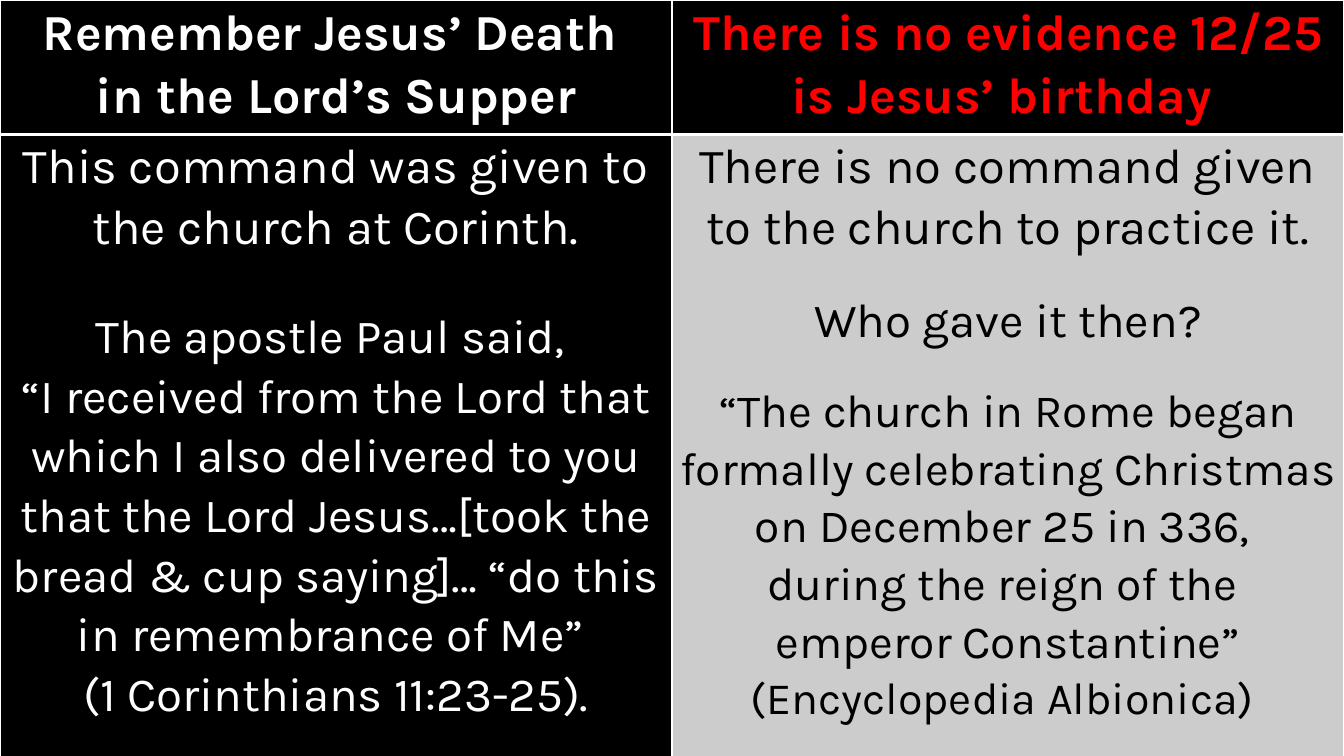
from dataclasses import dataclass

from lxml.etree import SubElement
from pptx import Presentation
from pptx.dml.color import RGBColor as Rgb
from pptx.enum.text import PP_ALIGN as Align
from pptx.oxml.ns import qn
from pptx.table import _Cell as TableCell
from pptx.util import Pt

SCALE = 9525


@dataclass(frozen=True)
class Theme:
    black: str = "000000"
    white: str = "FFFFFF"
    red: str = "FF0000"
    gray: str = "CCCCCC"
    font: str = "Karla"
    head: int = 36
    lead: int = 35
    body: int = 34
    quote: int = 33
    credit: int = 32
    leading: float = 1.07
    thin: int = 1
    thick: int = 3


@dataclass(frozen=True)
class Line:
    text: str
    size: int
    gap: int = 0


@dataclass(frozen=True)
class Panel:
    lines: tuple[Line, ...]
    ink: str
    fill: str


THEME = Theme()
WIDTH, HEIGHT = 1280, 720
COLS = (640, 640)
ROWS = (128, 640)
INSET = 7

HEADS = (
    Panel((
        Line("Remember Jesus’ Death ", THEME.head),
        Line("in the Lord’s Supper", THEME.head),
    ), THEME.white, THEME.black),
    Panel((
        Line("There is no evidence 12/25 is Jesus’ birthday ", THEME.head),
    ), THEME.red, THEME.black),
)
BODIES = (
    Panel((
        Line("This command was given to the church at Corinth.", THEME.lead),
        Line("The apostle Paul said, ", THEME.body, gap=35),
        Line("“I received from the Lord that which I also delivered to you "
             "that the Lord Jesus…[took the bread & cup saying]… "
             "“do this in remembrance of Me” ", THEME.body),
        Line("(1 Corinthians 11:23-25).", THEME.body),
    ), THEME.white, THEME.black),
    Panel((
        Line("There is no command given to the church to practice it.",
             THEME.lead),
        Line("Who gave it then?", THEME.body, gap=23),
        Line("“The church in Rome began formally celebrating Christmas "
             "on December 25 in 336, ", THEME.quote, gap=23),
        Line("during the reign of the ", THEME.quote),
        Line("emperor Constantine”", THEME.quote),
        Line("(Encyclopedia Albionica) ", THEME.credit),
    ), THEME.black, THEME.gray),
)


def px(count: int) -> int:
    return count * SCALE


def add_edges(cell: TableCell, top: int, bottom: int) -> None:
    """Rule all four sides in white; top and bottom widths are in points."""
    props = cell._tc.get_or_add_tcPr()
    widths = {"L": THEME.thin, "R": THEME.thin, "T": top, "B": bottom}
    for side, width in widths.items():
        edge = SubElement(props, qn(f"a:ln{side}"), w=str(Pt(width)))
        paint = SubElement(edge, qn("a:solidFill"))
        SubElement(paint, qn("a:srgbClr"), val=THEME.white)


def fill_cell(cell: TableCell, panel: Panel, bold: bool) -> None:
    cell.margin_left = cell.margin_right = px(INSET)
    cell.margin_top = cell.margin_bottom = 0
    cell.fill.solid()
    cell.fill.fore_color.rgb = Rgb.from_string(panel.fill)
    frame = cell.text_frame
    frame.text = "\n".join(line.text for line in panel.lines)
    for para, line in zip(frame.paragraphs, panel.lines):
        para.alignment = Align.CENTER
        para.line_spacing = THEME.leading
        para.space_before = Pt(line.gap)
        para.font.name = THEME.font
        para.font.size = Pt(line.size)
        para.font.bold = bold
        para.font.color.rgb = Rgb.from_string(panel.ink)


def main() -> None:
    deck = Presentation()
    deck.slide_width, deck.slide_height = px(WIDTH), px(HEIGHT)
    slide = deck.slides.add_slide(deck.slide_layouts[6])
    back = slide.background.fill
    back.solid()
    back.fore_color.rgb = Rgb.from_string(THEME.black)

    table = slide.shapes.add_table(
        len(ROWS), len(COLS), 0, 0, px(sum(COLS)), px(sum(ROWS))).table
    table.first_row = table.horz_banding = False
    for col, width in zip(table.columns, COLS):
        col.width = px(width)
    for row, height in zip(table.rows, ROWS):
        row.height = px(height)

    for top, panels in enumerate((HEADS, BODIES)):
        is_head = panels is HEADS
        for left, panel in enumerate(panels):
            cell = table.cell(top, left)
            add_edges(cell,
                      top=THEME.thin if is_head else THEME.thick,
                      bottom=THEME.thick if is_head else THEME.thin)
            fill_cell(cell, panel, bold=is_head)

    deck.save("out.pptx")


if __name__ == "__main__":
    main()
